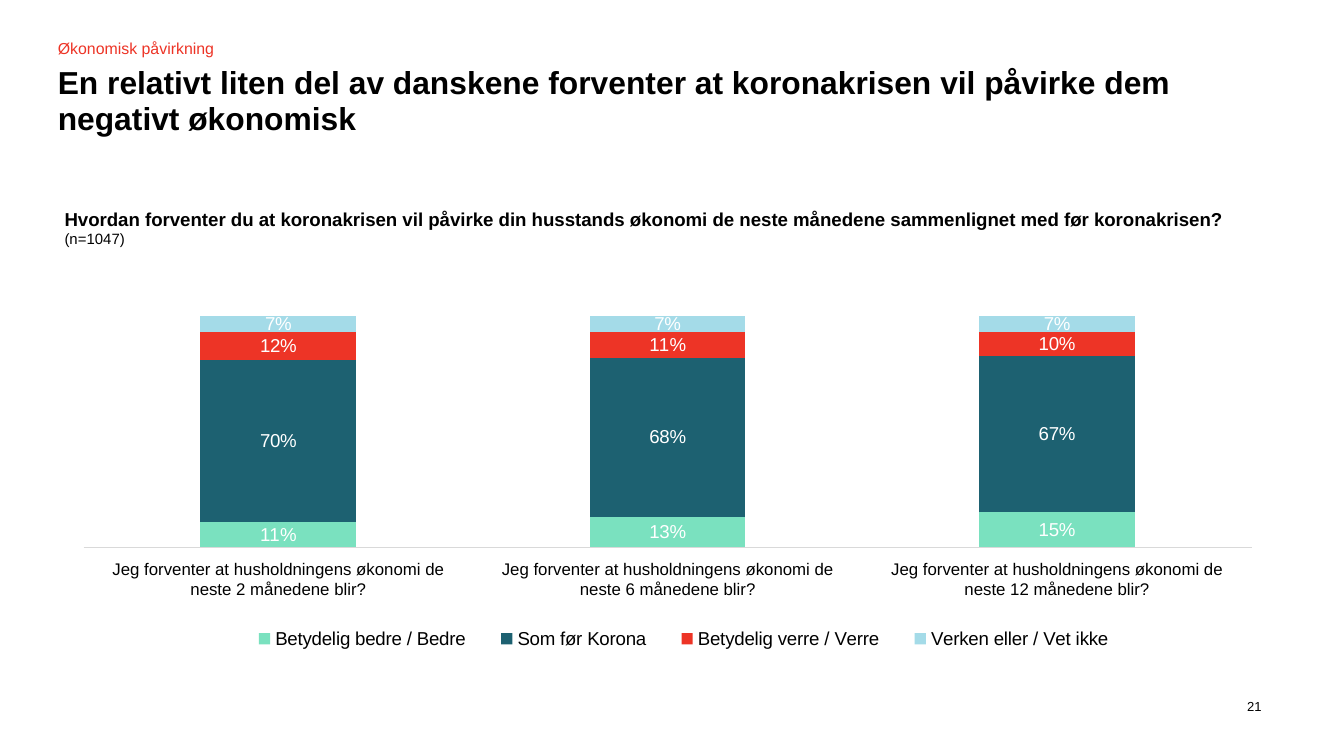
from lxml import etree
from pptx import Presentation
from pptx.chart.data import CategoryChartData
from pptx.dml.color import RGBColor
from pptx.enum.chart import XL_CHART_TYPE as ChartType, XL_LEGEND_POSITION as LegendPosition
from pptx.enum.chart import XL_TICK_LABEL_POSITION as LabelPosition, XL_TICK_MARK as TickMark
from pptx.oxml import parse_xml
from pptx.oxml.ns import nsdecls, qn
from pptx.util import Inches, Pt

FONT = "Arial"
BLACK, WHITE, RED, GREY = "000000", "FFFFFF", "ED3426", "D9D9D9"
PERCENT = "###0%"
MONTHS = (2, 6, 12)
SERIES = [
    ("Betydelig bedre / Bedre", (0.11, 0.13, 0.15), "7AE1BF"),
    ("Som før Korona", (0.70, 0.68, 0.67), "1D6171"),
    ("Betydelig verre / Verre", (0.12, 0.11, 0.10), RED),
    ("Verken eller / Vet ikke", (0.07, 0.07, 0.07), "A4DBE8"),
]


def color(hex_string):
    return RGBColor.from_string(hex_string)


def set_values(target, values):
    for name, value in values.items():
        setattr(target, name, value)


def style_font(font, size, hex_string=BLACK, bold=False):
    set_values(font, {"name": FONT, "size": Pt(size), "bold": bold})
    font.color.rgb = color(hex_string)


def add_text(slide, box, text, size, hex_string=BLACK, bold=False, wrap=True, spacing=None):
    shape = slide.shapes.add_textbox(*map(Inches, box))
    frame = shape.text_frame
    set_values(frame, {"margin_left": 0, "margin_top": 0, "margin_right": 0,
                       "margin_bottom": 0, "word_wrap": wrap})
    paragraph = frame.paragraphs[0]
    paragraph.line_spacing = spacing
    run = paragraph.add_run()
    run.text = text
    style_font(run.font, size, hex_string, bold)


def add_heading(slide, left, top, width):
    # Section label above the slide title
    add_text(slide, (left, top, 1.21, 0.14), "Økonomisk påvirkning", 8.5, RED, wrap=False)
    add_text(slide, (left, top + 0.2, width, 0.54),
             "En relativt liten del av danskene forventer at koronakrisen vil påvirke dem "
             "negativt økonomisk", 17, bold=True, spacing=0.95)


def add_question(slide, left, top, width, height):
    # One-cell table with the survey question and sample size
    table = slide.shapes.add_table(1, 1, *map(Inches, (left, top, width, height))).table
    set_values(table, {"first_row": False, "horz_banding": False})
    cell = table.cell(0, 0)
    set_values(cell, {"margin_left": 0, "margin_top": 0, "margin_right": 0,
                      "margin_bottom": Inches(0.08)})
    lines = [
        ("Hvordan forventer du at koronakrisen vil påvirke din husstands økonomi de neste "
         "månedene sammenlignet med før koronakrisen?", 10, True),
        ("(n=1047)", 8, False),
    ]
    frame = cell.text_frame
    for index, (text, size, bold) in enumerate(lines):
        paragraph = frame.add_paragraph() if index else frame.paragraphs[0]
        run = paragraph.add_run()
        run.text = text
        style_font(run.font, size, bold=bold)

    # White borders precede the fill in the cell properties
    properties = cell._tc.get_or_add_tcPr()
    for side in ("lnL", "lnR", "lnT", "lnB"):
        properties.append(parse_xml(
            f'<a:{side} {nsdecls("a")} w="12700"><a:solidFill>'
            f'<a:srgbClr val="{WHITE}"/></a:solidFill></a:{side}>'))
    cell.fill.solid()
    cell.fill.fore_color.rgb = color(WHITE)


def set_layout(element, position, values):
    """Place a chart part by fractions of the chart's size."""
    for old_layout in element.findall(qn("c:layout")):
        element.remove(old_layout)
    layout = parse_xml(f'<c:layout {nsdecls("c")}><c:manualLayout/></c:layout>')
    for name, value in values.items():
        etree.SubElement(layout[0], qn(f"c:{name}")).set("val", str(value))
    element.insert(position, layout)


def add_expectation_chart(slide, left, top, width, height):
    data = CategoryChartData(number_format=PERCENT)
    data.categories = [f"Jeg forventer at husholdningens økonomi de neste {months} månedene blir?"
                       for months in MONTHS]
    for name, values, _ in SERIES:
        data.add_series(name, values)
    chart = slide.shapes.add_chart(ChartType.COLUMN_STACKED_100,
                                   *map(Inches, (left, top, width, height)), data).chart
    set_values(chart, {"has_title": False, "has_legend": True})
    style_font(chart.font, 10)

    # Legend, laid out right after its position element
    legend = chart.legend
    set_values(legend, {"position": LegendPosition.BOTTOM, "include_in_layout": False})
    style_font(legend.font, 10)
    edges = {"xMode": "edge", "yMode": "edge"}
    set_layout(legend._element, 1, {**edges, "x": 0.14, "y": 0.86, "w": 0.74, "h": 0.09})
    set_layout(chart._chartSpace.chart.plotArea, 0,
               {"layoutTarget": "inner", **edges, "x": 0.021, "y": 0.11, "w": 0.952, "h": 0.57})

    # Axes
    axis = chart.category_axis
    set_values(axis, {"major_tick_mark": TickMark.NONE, "minor_tick_mark": TickMark.NONE,
                      "tick_label_position": LabelPosition.LOW})
    style_font(axis.tick_labels.font, 9)
    axis.tick_labels.offset = 0
    axis.format.line.color.rgb = color(GREY)
    axis.format.line.width = Pt(0.75)
    set_values(chart.value_axis, {"visible": False, "has_major_gridlines": False,
                                  "major_unit": 0.2, "minimum_scale": 0, "maximum_scale": 1})

    # Columns and their labels
    plot = chart.plots[0]
    set_values(plot, {"gap_width": 150, "overlap": 100, "vary_by_categories": False})
    for series, (_, _, fill) in zip(plot.series, SERIES):
        series.format.fill.solid()
        series.format.fill.fore_color.rgb = color(fill)
        labels = series.data_labels
        set_values(labels, {"show_value": True, "number_format": PERCENT,
                            "number_format_is_linked": False})
        style_font(labels.font, 10, WHITE)


def main():
    presentation = Presentation()
    # Widescreen, 16 to 9
    set_values(presentation, {"slide_width": Inches(10), "slide_height": Inches(10) * 9 // 16})
    slide = presentation.slides.add_slide(presentation.slide_layouts[6])
    add_heading(slide, 0.43, 0.29, 8.59)
    add_question(slide, 0.48, 1.56, 9.13, 0.38)
    add_expectation_chart(slide, 0.43, 2.02, 9.13, 3.02)
    # Page number
    add_text(slide, (9.28, 5.2, 0.28, 0.12), "21", 7)
    presentation.save("out.pptx")


if __name__ == "__main__":
    main()
